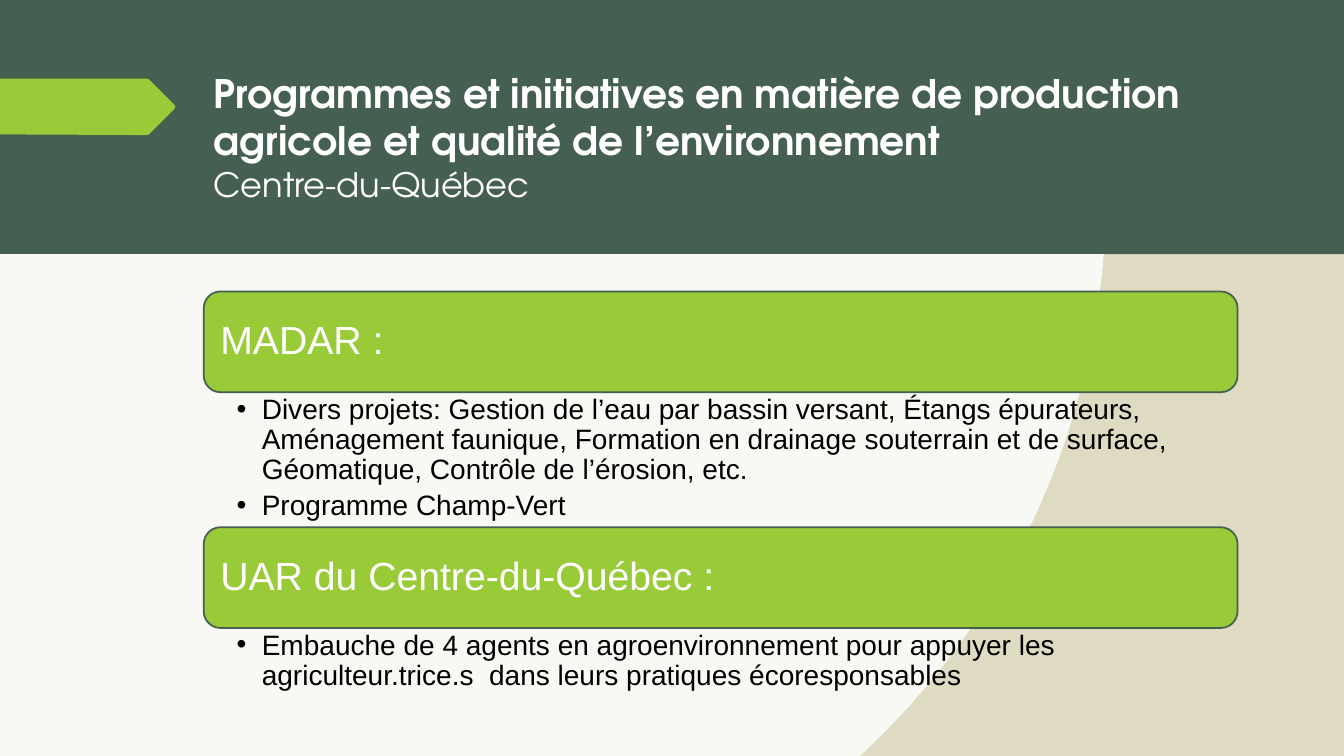
import math

from lxml import etree
from pptx import Presentation
from pptx.dml.color import RGBColor
from pptx.enum.shapes import MSO_SHAPE
from pptx.enum.text import MSO_ANCHOR, PP_ALIGN
from pptx.oxml.ns import qn
from pptx.util import Pt

RECT = MSO_SHAPE.RECTANGLE
ROUNDED = MSO_SHAPE.ROUNDED_RECTANGLE
TOP, MIDDLE = MSO_ANCHOR.TOP, MSO_ANCHOR.MIDDLE
LEFT = PP_ALIGN.LEFT

DARK_GREEN = RGBColor(0x45, 0x5F, 0x51)
LIME = RGBColor(0x99, 0xCB, 0x38)
BEIGE = RGBColor(0xDF, 0xDB, 0xC2)
OFF_WHITE = RGBColor(0xF8, 0xF8, 0xF4)
WHITE = RGBColor(0xFF, 0xFF, 0xFF)
BLACK = RGBColor(0, 0, 0)

SLIDE_W, SLIDE_H = 960, 540
HEADER_H = 181.5
CONTENT_X, CONTENT_W = 145.5, 738.5
LABEL_H = 72
SECTIONS = [
    ("MADAR :", 96.4, [
        "Divers projets: Gestion de l’eau par bassin versant, Étangs épurateurs, "
        "Aménagement faunique, Formation en drainage souterrain et de surface, "
        "Géomatique, Contrôle de l’érosion, etc.",
        "Programme Champ-Vert",
    ]),
    ("UAR du Centre-du-Québec :", 64, [
        "Embauche de 4 agents en agroenvironnement pour appuyer les "
        "agriculteur.trice.s  dans leurs pratiques écoresponsables",
    ]),
]


def add_text(tf, text, size, color, font="Arial", bold=False, line=1.0,
             after=0, bullet=False, anchor=TOP, insets=(7.2, 3.6, 7.2, 3.6)):
    """Append one paragraph to a frame, reusing its first one while empty."""
    tf.word_wrap = True
    tf.vertical_anchor = anchor
    tf.margin_left, tf.margin_top, tf.margin_right, tf.margin_bottom = map(Pt, insets)
    p = tf.paragraphs[0] if not tf.text else tf.add_paragraph()
    p.alignment = LEFT
    p.line_spacing = line
    p.space_after = Pt(after)
    if bullet:
        pPr = p._p.get_or_add_pPr()
        pPr.set("marL", str(Pt(18)))
        pPr.set("indent", str(-Pt(18)))
        etree.SubElement(pPr, qn("a:buFont")).set("typeface", "Arial")
        etree.SubElement(pPr, qn("a:buChar")).set("char", "•")
    r = p.add_run()
    r.text = text
    r.font.name = font
    r.font.size = Pt(size)
    r.font.bold = bold
    r.font.color.rgb = color


def paint(sp, fill, outline=None):
    sp.shadow.inherit = False
    sp.fill.solid()
    sp.fill.fore_color.rgb = fill
    if outline is None:
        sp.line.fill.background()
    else:
        sp.line.color.rgb = outline
        sp.line.width = Pt(1.25)


prs = Presentation()
prs.slide_width, prs.slide_height = Pt(SLIDE_W), Pt(SLIDE_H)
s = prs.slides.add_slide(prs.slide_layouts[6])
s.background.fill.solid()
s.background.fill.fore_color.rgb = BEIGE

# Pale area bounded on the right by an arc
CENTER_X, CENTER_Y, RADIUS, STEPS = 244.3, 138.6, 545.8, 60
start = math.asin((HEADER_H - CENTER_Y) / RADIUS)
end = math.asin((SLIDE_H - CENTER_Y) / RADIUS)
angles = [start + (end - start) * i / STEPS for i in range(STEPS + 1)]
pale_area = [(0, HEADER_H)]
pale_area += [(CENTER_X + RADIUS * math.cos(a), CENTER_Y + RADIUS * math.sin(a))
              for a in angles]
pale_area.append((0, SLIDE_H))

# Arrow tag with softened corners
arrow_tag = [(0, 56.2), (105.1, 56.2), (106.6, 56.9), (124.6, 74.9), (125.3, 76.3),
             (124.6, 77.8), (106.6, 95.8), (105.1, 96.5), (0, 96)]

header = s.shapes.add_shape(RECT, 0, 0, Pt(SLIDE_W), Pt(HEADER_H))
paint(header, DARK_GREEN)

for points, color in ((pale_area, OFF_WHITE), (arrow_tag, LIME)):
    (x0, y0), *rest = [(round(x * 100), round(y * 100)) for x, y in points]
    builder = s.shapes.build_freeform(x0, y0, scale=Pt(1) / 100)
    builder.add_line_segments(rest, close=True)
    paint(builder.convert_to_shape(), color)

title = s.shapes.add_textbox(Pt(CONTENT_X), Pt(40.3), Pt(CONTENT_W), Pt(114.5))
for text, size, bold in (
    ("Programmes et initiatives en matière de production agricole "
     "et qualité de l’environnement", 28, True),
    ("Centre-du-Québec", 24, False),
):
    add_text(title.text_frame, text, size, WHITE, font="TeX Gyre Adventor",
             bold=bold, anchor=MIDDLE)

top = 208.2
for heading, body_h, bullets in SECTIONS:
    label = s.shapes.add_shape(ROUNDED, Pt(CONTENT_X), Pt(top), Pt(CONTENT_W), Pt(LABEL_H))
    paint(label, LIME, DARK_GREEN)
    add_text(label.text_frame, heading, 28, WHITE, line=0.9, anchor=MIDDLE,
             insets=(8.4, 8.4, 8.4, 8.4))
    body = s.shapes.add_textbox(Pt(CONTENT_X), Pt(top + LABEL_H), Pt(CONTENT_W), Pt(body_h))
    for text in bullets:
        add_text(body.text_frame, text, 20, BLACK, line=0.9, after=4, bullet=True,
                 insets=(23.5, 2, 11.5, 2))
    top += LABEL_H + body_h

prs.save("out.pptx")
